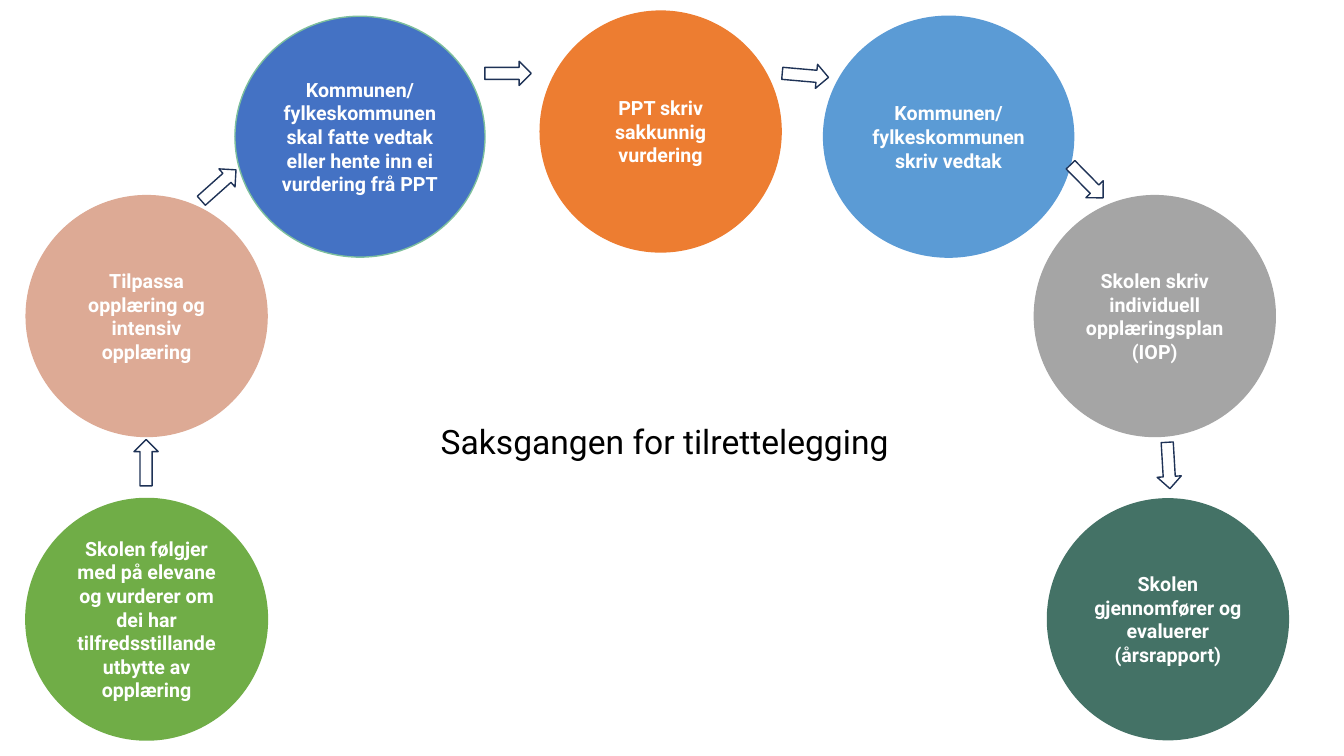
from dataclasses import dataclass
from pptx import Presentation
from pptx.dml.color import RGBColor
from pptx.enum.shapes import MSO_SHAPE
from pptx.enum.text import MSO_ANCHOR, MSO_AUTO_SIZE, PP_ALIGN
from pptx.util import Cm, Pt

DISC = MSO_SHAPE.FLOWCHART_CONNECTOR
ARROW = MSO_SHAPE.RIGHT_ARROW
MIDDLE = MSO_ANCHOR.MIDDLE
FIXED = MSO_AUTO_SIZE.NONE
LEFT, CENTER = PP_ALIGN.LEFT, PP_ALIGN.CENTER


@dataclass(frozen=True)
class Theme:
    font: str = "Roboto"
    head: int = 24
    body: int = 14
    thin: float = 1
    thick: float = 1.5
    white: str = "FFFFFF"
    black: str = "000000"
    navy: str = "1E3256"
    green: str = "70AD47"
    pink: str = "DDAA95"
    blue: str = "4472C4"
    mint: str = "7DBF9D"
    orange: str = "ED7D31"
    sky: str = "5B9BD5"
    gray: str = "A5A5A5"
    pine: str = "447266"


THEME = Theme()
SLIDE = (0, 0, 33.86, 19.05)
SIZE, WIDE = 6.07, 6.3
SHAFT = (1.17, 0.61)

STEPS = [
    (0.66, 12.57, SIZE, THEME.green, THEME.green, THEME.thick,
     "Skolen følgjer med på elevane og vurderer om dei har "
     "tilfredsstillande utbytte av opplæring"),
    (0.66, 4.93, SIZE, THEME.pink, THEME.pink, THEME.thin,
     "Tilpassa opplæring og intensiv opplæring"),
    (5.92, 0.41, WIDE, THEME.blue, THEME.mint, THEME.thin,
     "Kommunen/ fylkeskommunen skal fatte vedtak "
     "eller hente inn ei vurdering frå PPT"),
    (13.61, 0.28, SIZE, THEME.orange, THEME.orange, THEME.thin,
     "PPT skriv sakkunnig vurdering"),
    (20.75, 0.41, WIDE, THEME.sky, THEME.sky, THEME.thin,
     "Kommunen/ fylkeskommunen skriv vedtak"),
    (26.06, 4.93, SIZE, THEME.gray, THEME.gray, THEME.thin,
     "Skolen skriv individuell opplæringsplan (IOP)"),
    (26.39, 12.57, SIZE, THEME.pine, THEME.pine, THEME.thin,
     "Skolen gjennomfører og evaluerer (årsrapport)"),
]

TURNS = [
    (3.68, 11.66, 270),
    (5.51, 4.67, 318.3),
    (12.8, 1.85, 0),
    (20.29, 1.9, 5),
    (27.38, 4.57, 45.5),
    (29.44, 11.73, 86.6),
]


def add_form(slide, kind, box, fill, line, width):
    form = slide.shapes.add_shape(kind, *map(Cm, box))
    form.shadow.inherit = False
    form.fill.solid()
    form.fill.fore_color.rgb = RGBColor.from_string(fill)
    form.line.color.rgb = RGBColor.from_string(line)
    form.line.width = Pt(width)
    return form


def write(frame, text, size, color, bold, align):
    frame.word_wrap = True
    frame.auto_size = FIXED
    frame.vertical_anchor = MIDDLE
    para = frame.paragraphs[0]
    para.alignment = align
    para.line_spacing = 1.0
    para.space_before = Pt(0)
    run = para.add_run()
    run.text = text
    font = run.font
    font.name = THEME.font
    font.size = Pt(size)
    font.bold = bold
    font.color.rgb = RGBColor.from_string(color)


def add_steps(slide, box):
    left, top = box[:2]
    for x, y, width, fill, line, weight, text in STEPS:
        disc = add_form(slide, DISC, (left + x, top + y, width, SIZE),
                        fill, line, weight)
        write(disc.text_frame, text, THEME.body, THEME.white, True, CENTER)


def add_turns(slide, box):
    left, top = box[:2]
    width, height = SHAFT
    for x, y, angle in TURNS:
        place = (left + x - width / 2, top + y - height / 2, width, height)
        arrow = add_form(slide, ARROW, place, THEME.white, THEME.navy,
                         THEME.thin)
        arrow.rotation = angle


def add_title(slide, box):
    title = slide.shapes.title
    title.left, title.top, title.width, title.height = map(Cm, box)
    write(title.text_frame, "Saksgangen for tilrettelegging",
          THEME.head, THEME.black, False, LEFT)


def main():
    deck = Presentation()
    deck.slide_width, deck.slide_height = map(Cm, SLIDE[2:])
    slide = deck.slides.add_slide(deck.slide_layouts[5])
    add_steps(slide, SLIDE)
    add_turns(slide, SLIDE)
    add_title(slide, (10.85, 10.49, 12.17, 1.27))
    deck.save("out.pptx")


if __name__ == "__main__":
    main()
